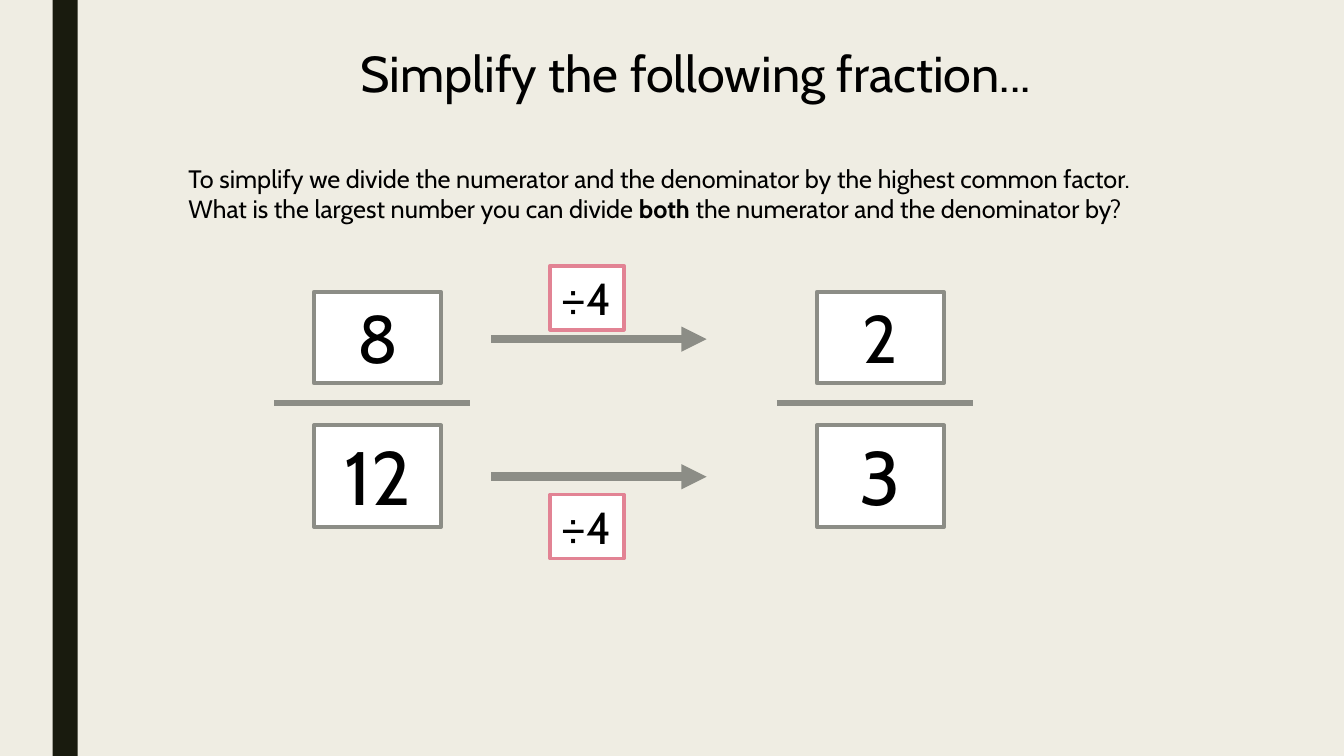
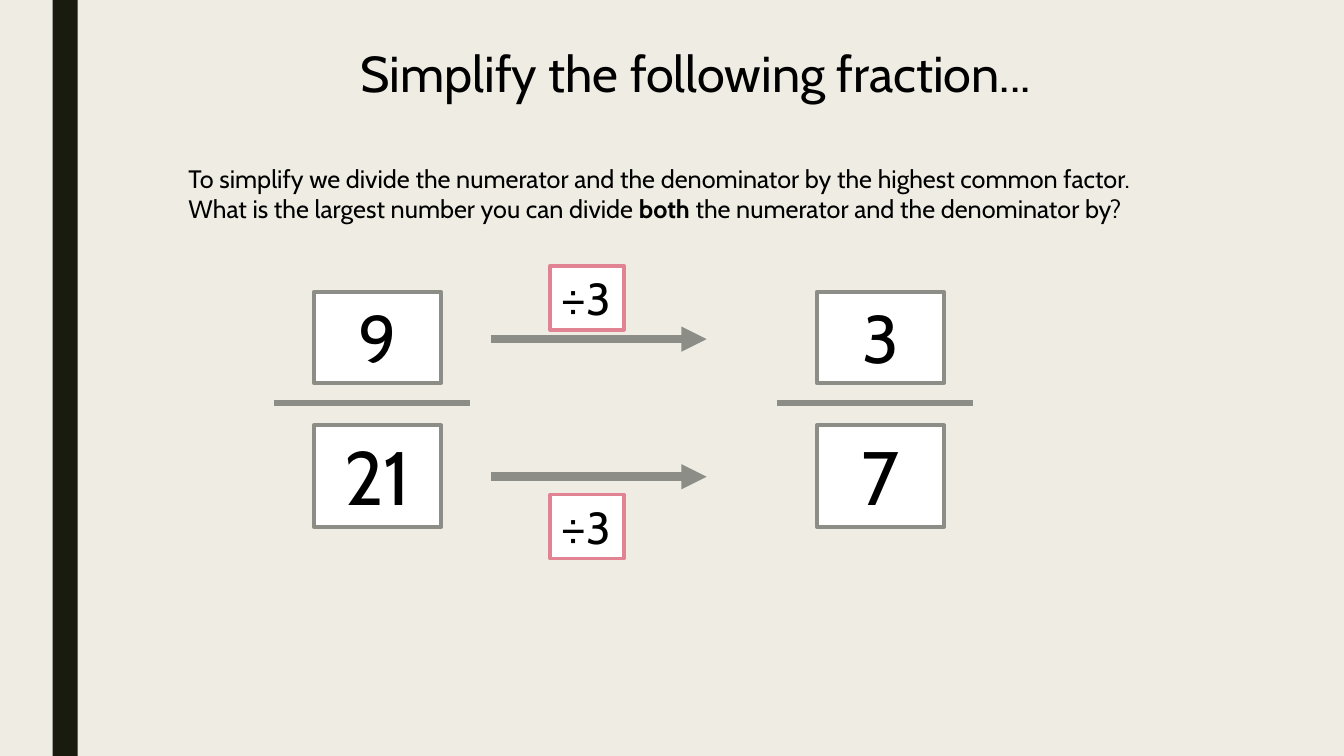
from dataclasses import dataclass

from pptx import Presentation
from pptx.dml.color import RGBColor
from pptx.enum.shapes import MSO_CONNECTOR, MSO_SHAPE
from pptx.enum.text import MSO_ANCHOR, MSO_AUTO_SIZE, PP_ALIGN
from pptx.oxml.ns import qn
from pptx.util import Pt
from lxml.etree import SubElement

PX = 9525  # EMU in one px, 96 px to the inch


@dataclass(frozen=True)
class Theme:
    font: str = "Cabin"
    paper: RGBColor = RGBColor(0xEF, 0xED, 0xE3)
    band: RGBColor = RGBColor(0x19, 0x1B, 0x0E)
    ink: RGBColor = RGBColor(0, 0, 0)
    white: RGBColor = RGBColor(255, 255, 255)
    grey: RGBColor = RGBColor(0x8C, 0x8D, 0x86)
    pink: RGBColor = RGBColor(0xE2, 0x83, 0x94)
    title: int = 36
    body: int = 18
    step: int = 32
    top: int = 48
    base: int = 54
    edge: float = 2.75
    bar: float = 4.5
    arrow: int = 6


T = Theme()
TITLE = "Simplify the following fraction... "
HINT = (
    (("To simplify we divide the numerator and the denominator by the highest common factor.", False),),
    (("What is the largest number you can divide ", False), ("both", True),
     (" the numerator and the denominator by?", False)),
)
# Start fraction, divisor, simplified fraction
TASKS = (
    ((8, 12), 4, (2, 3)),
    ((9, 21), 3, (3, 7)),
)


def emu(*px):
    return [n * PX for n in px]


def style(frame, size, align=PP_ALIGN.LEFT):
    frame.auto_size = MSO_AUTO_SIZE.SHAPE_TO_FIT_TEXT
    for para in frame.paragraphs:
        para.alignment = align
        para.font.name = T.font
        para.font.size = Pt(size)
        para.font.color.rgb = T.ink


def add_box(shapes, area, text, size, edge, align=PP_ALIGN.CENTER, wrap=True):
    """Add a white, outlined box with one line of text."""
    box = shapes.add_textbox(*emu(*area))
    box.fill.solid()
    box.fill.fore_color.rgb = T.white
    box.line.color.rgb = edge
    box.line.width = Pt(T.edge)
    box.text_frame.text = text
    box.text_frame.word_wrap = wrap
    style(box.text_frame, size, align)


def add_line(shapes, left, right, y, width, arrow=False):
    """Add a level grey line, with an arrowhead at its right end if asked."""
    line = shapes.add_connector(MSO_CONNECTOR.STRAIGHT, *emu(left, y, right, y))
    line.line.color.rgb = T.grey
    line.line.width = Pt(width)
    props = line.element.spPr
    if arrow:
        SubElement(props.find(qn("a:ln")), qn("a:tailEnd"), type="triangle")
    SubElement(props, qn("a:effectLst"))


def add_fraction(slide, left, pair):
    """Add a grouped fraction whose bar starts at left."""
    shapes = slide.shapes.add_group_shape().shapes
    top, base = pair
    add_box(shapes, (left + 38, 278, 121, 87), str(top), T.top, T.grey)
    add_box(shapes, (left + 38, 405, 121, 97), str(base), T.base, T.grey)
    add_line(shapes, left, left + 187, 384, T.bar)


def add_step(slide, line_y, box_y, divisor):
    """Add an arrow and the box that names the division."""
    add_line(slide.shapes, 468, 673, line_y, T.arrow, arrow=True)
    add_box(slide.shapes, (524, box_y, 70, 61), f"÷{divisor}", T.step, T.pink,
            PP_ALIGN.LEFT, wrap=False)


def add_title(slide):
    title = slide.shapes.title
    title.left, title.top, title.width, title.height = emu(170, 35, 996, 68)
    title.text_frame.text = TITLE
    title.text_frame.vertical_anchor = MSO_ANCHOR.TOP
    style(title.text_frame, T.title, PP_ALIGN.CENTER)


def add_hint(slide):
    frame = slide.shapes.add_textbox(*emu(170, 151, 1062, 68)).text_frame
    frame.word_wrap = True
    for i, parts in enumerate(HINT):
        para = frame.add_paragraph() if i else frame.paragraphs[0]
        for text, bold in parts:
            run = para.add_run()
            run.text = text
            if bold:
                run.font.bold = True
    style(frame, T.body)


def set_master(deck, slide):
    """Give the master its paper and band; the band is drawn on slide, then moved."""
    master = deck.slide_master
    master.background.fill.solid()
    master.background.fill.fore_color.rgb = T.paper
    band = slide.shapes.add_shape(MSO_SHAPE.RECTANGLE, *emu(50, 0, 24, 720))
    band.shadow.inherit = False
    band.fill.solid()
    band.fill.fore_color.rgb = T.band
    band.line.fill.background()
    master.shapes.element.append(band.element)


def add_task(slide, start, divisor, result):
    add_title(slide)
    add_fraction(slide, 261, start)
    add_hint(slide)
    add_step(slide, 323, 253, divisor)
    add_step(slide, 454, 471, divisor)
    add_fraction(slide, 740, result)


def main():
    deck = Presentation()
    deck.slide_width, deck.slide_height = emu(1280, 720)
    layout = deck.slide_layouts.get_by_name("Title Only")
    slides = [deck.slides.add_slide(layout) for _ in TASKS]
    set_master(deck, slides[0])
    for slide, task in zip(slides, TASKS):
        add_task(slide, *task)
    deck.save("out.pptx")


if __name__ == "__main__":
    main()
